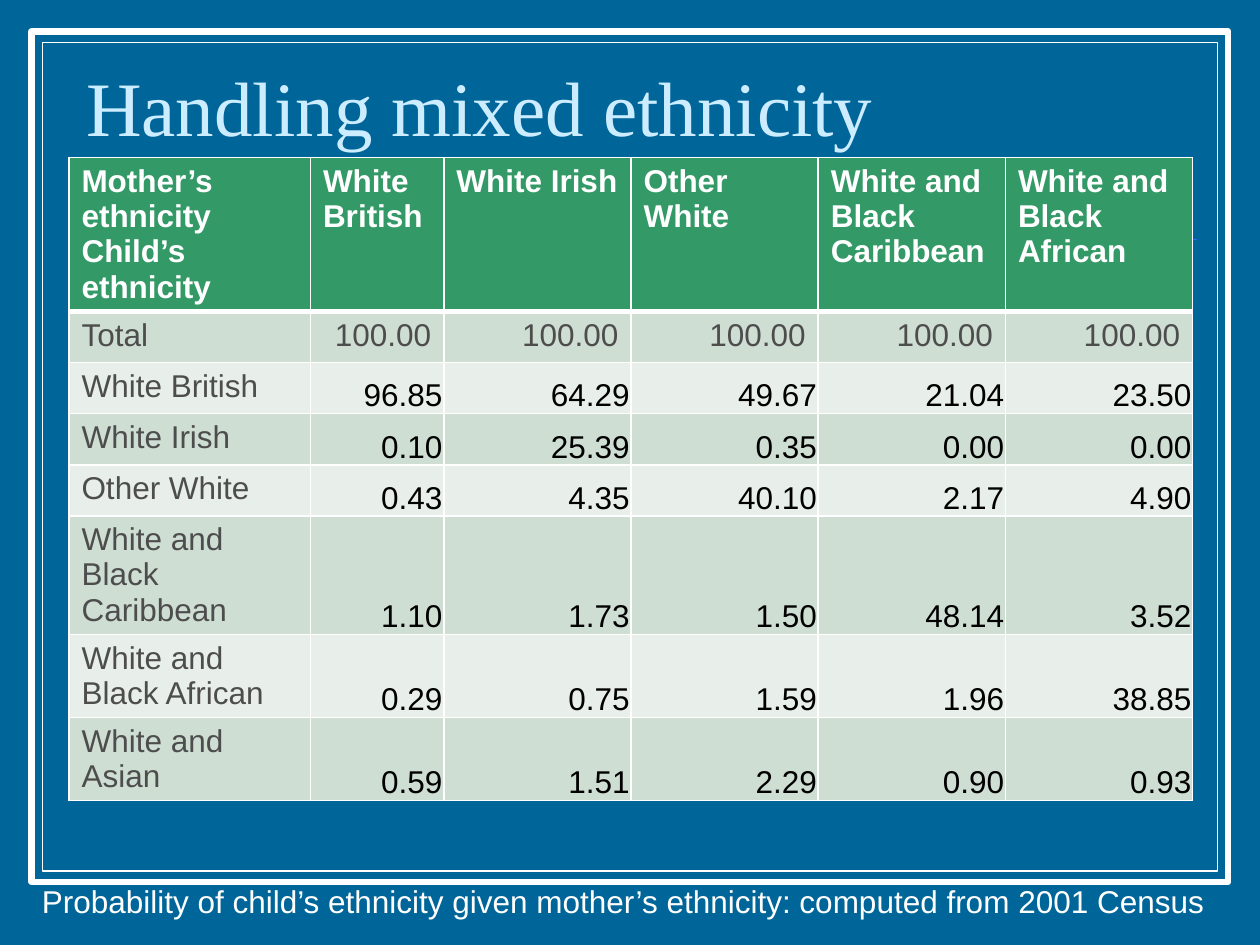
from dataclasses import dataclass

from lxml.etree import SubElement
from pptx import Presentation
from pptx.dml.color import RGBColor
from pptx.enum.shapes import MSO_CONNECTOR, MSO_SHAPE
from pptx.enum.text import MSO_ANCHOR, MSO_AUTO_SIZE, PP_ALIGN
from pptx.oxml.ns import qn
from pptx.util import Pt


@dataclass(frozen=True)
class Theme:
    background: str = "006699"
    white: str = "FFFFFF"
    title: str = "CCECFF"
    rule: str = "3366FF"
    header: str = "339966"
    bands: tuple = ("CEDED3", "E8EFEA")
    label: str = "4D4D4D"
    value: str = "000000"
    title_font: str = "Times New Roman"
    body_font: str = "Arial"
    title_size: float = 44
    body_size: float = 18


THEME = Theme()

HEADINGS = ["Mother’s ethnicity\nChild’s ethnicity", "White British", "White Irish",
            "Other White", "White and Black Caribbean", "White and Black African"]
PROBABILITIES = [
    ("Total", 100, 100, 100, 100, 100),
    ("White British", 96.85, 64.29, 49.67, 21.04, 23.50),
    ("White Irish", 0.10, 25.39, 0.35, 0.00, 0.00),
    ("Other White", 0.43, 4.35, 40.10, 2.17, 4.90),
    ("White and Black Caribbean", 1.10, 1.73, 1.50, 48.14, 3.52),
    ("White and Black African", 0.29, 0.75, 1.59, 1.96, 38.85),
    ("White and Asian", 0.59, 1.51, 2.29, 0.90, 0.93),
]
COLUMN_WIDTHS = [138, 76.2, 107, 107, 107, 107]
ROW_HEIGHTS = [88, 29.2, 29.2, 29.2, 29.2, 67.4, 47.5, 47.5]
TOTAL_ROW = 1


def rgb(value):
    return RGBColor.from_string(value)


def set_all(target, values):
    for name, value in values.items():
        setattr(target, name, value)


def write(text_frame, text, color, font=THEME.body_font, size=THEME.body_size,
          bold=False, align=PP_ALIGN.LEFT):
    text_frame.text = text
    for paragraph in text_frame.paragraphs:
        paragraph.alignment = align
        for run in paragraph.runs:
            set_all(run.font, {"name": font, "size": Pt(size), "bold": bold})
            run.font.color.rgb = rgb(color)


def add_frame(slide, left, top, width, height):
    """Draw the double border and the rule that lies behind the table."""
    frame = slide.shapes.add_group_shape()
    for inset, weight in ((0, 3.5), (6.3, 0.75)):
        border = frame.shapes.add_shape(
            MSO_SHAPE.RECTANGLE, Pt(left + inset), Pt(top + inset),
            Pt(width - 2 * inset), Pt(height - 2 * inset))
        border.shadow.inherit = False
        border.fill.solid()
        border.fill.fore_color.rgb = rgb(THEME.background)
        border.line.color.rgb = rgb(THEME.white)
        border.line.width = Pt(weight)
    rule_y = Pt(top + 118.8)
    rule = frame.shapes.add_connector(
        MSO_CONNECTOR.STRAIGHT, Pt(left + 24), rule_y, Pt(left + width - 18), rule_y)
    rule.line.color.rgb = rgb(THEME.rule)
    rule.line.width = Pt(1)
    SubElement(rule.element.spPr, qn("a:effectLst"))


def place_title(slide, left, top, width, height):
    title = slide.shapes.title
    set_all(title, {"left": Pt(left), "top": Pt(top),
                    "width": Pt(width), "height": Pt(height)})
    set_all(title.text_frame, {"vertical_anchor": MSO_ANCHOR.BOTTOM,
                               "auto_size": MSO_AUTO_SIZE.NONE, "word_wrap": True})
    write(title.text_frame, "Handling mixed ethnicity", THEME.title,
          THEME.title_font, THEME.title_size)
    title.text_frame.paragraphs[0].line_spacing = 0.8
    # Bring the title in front of the frame
    title.element.getparent().append(title.element)


def add_cell_borders(cell, top, bottom):
    properties = cell._tc.get_or_add_tcPr()
    for side, weight in (("L", 1), ("R", 1), ("T", top), ("B", bottom)):
        line = SubElement(properties, qn(f"a:ln{side}"), w=str(Pt(weight)))
        fill = SubElement(line, qn("a:solidFill"))
        SubElement(fill, qn("a:srgbClr"), val=THEME.white)


def format_cell(cell, row, column, content):
    is_header = row == 0
    add_cell_borders(cell, top=3 if row == 1 else 1, bottom=3 if is_header else 1)
    cell.fill.solid()
    cell.fill.fore_color.rgb = rgb(THEME.header if is_header else THEME.bands[(row - 1) % 2])
    if is_header:
        write(cell.text_frame, content, THEME.white, bold=True)
    elif column == 0:
        write(cell.text_frame, content, THEME.label)
    else:
        color = THEME.label if row == TOTAL_ROW else THEME.value
        write(cell.text_frame, f"{content:.2f}", color, align=PP_ALIGN.RIGHT)
        if row != TOTAL_ROW:
            set_all(cell, {"vertical_anchor": MSO_ANCHOR.BOTTOM,
                           "margin_left": Pt(0.75), "margin_right": Pt(0.75),
                           "margin_top": Pt(0.75), "margin_bottom": Pt(0)})


def add_probability_table(slide, left, top):
    rows = [HEADINGS, *PROBABILITIES]
    table = slide.shapes.add_table(
        len(rows), len(HEADINGS), Pt(left), Pt(top),
        Pt(sum(COLUMN_WIDTHS)), Pt(sum(ROW_HEIGHTS))).table
    for column, width in zip(table.columns, COLUMN_WIDTHS):
        column.width = Pt(width)
    for row, height in zip(table.rows, ROW_HEIGHTS):
        row.height = Pt(height)
    for row, contents in enumerate(rows):
        for column, content in enumerate(contents):
            format_cell(table.cell(row, column), row, column, content)


def add_caption(slide, left, top, width, height):
    caption = slide.shapes.add_textbox(Pt(left), Pt(top), Pt(width), Pt(height)).text_frame
    set_all(caption, {"word_wrap": True, "auto_size": MSO_AUTO_SIZE.SHAPE_TO_FIT_TEXT})
    write(caption, "Probability of child’s ethnicity given mother’s ethnicity: "
                   "computed from 2001 Census", THEME.white)


def main():
    presentation = Presentation()
    set_all(presentation, {"slide_width": Pt(720), "slide_height": Pt(540)})
    slide = presentation.slides.add_slide(presentation.slide_layouts.get_by_name("Title Only"))
    slide.background.fill.solid()
    slide.background.fill.fore_color.rgb = rgb(THEME.background)
    add_frame(slide, 18, 18, 684, 486)
    place_title(slide, 42, 37.4, 642, 52.6)
    add_probability_table(slide, 39.4, 90)
    add_caption(slide, 16.8, 500.4, 686.4, 29)
    presentation.save("out.pptx")


if __name__ == "__main__":
    main()
